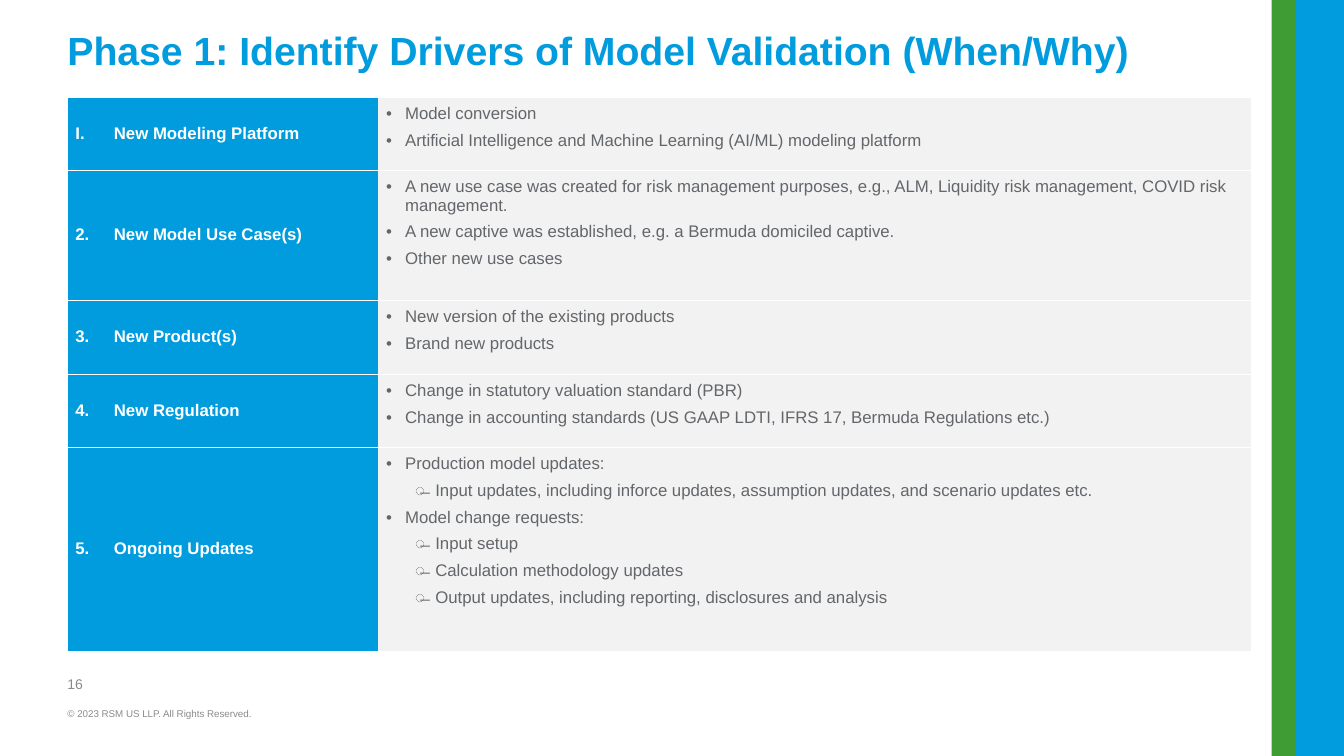
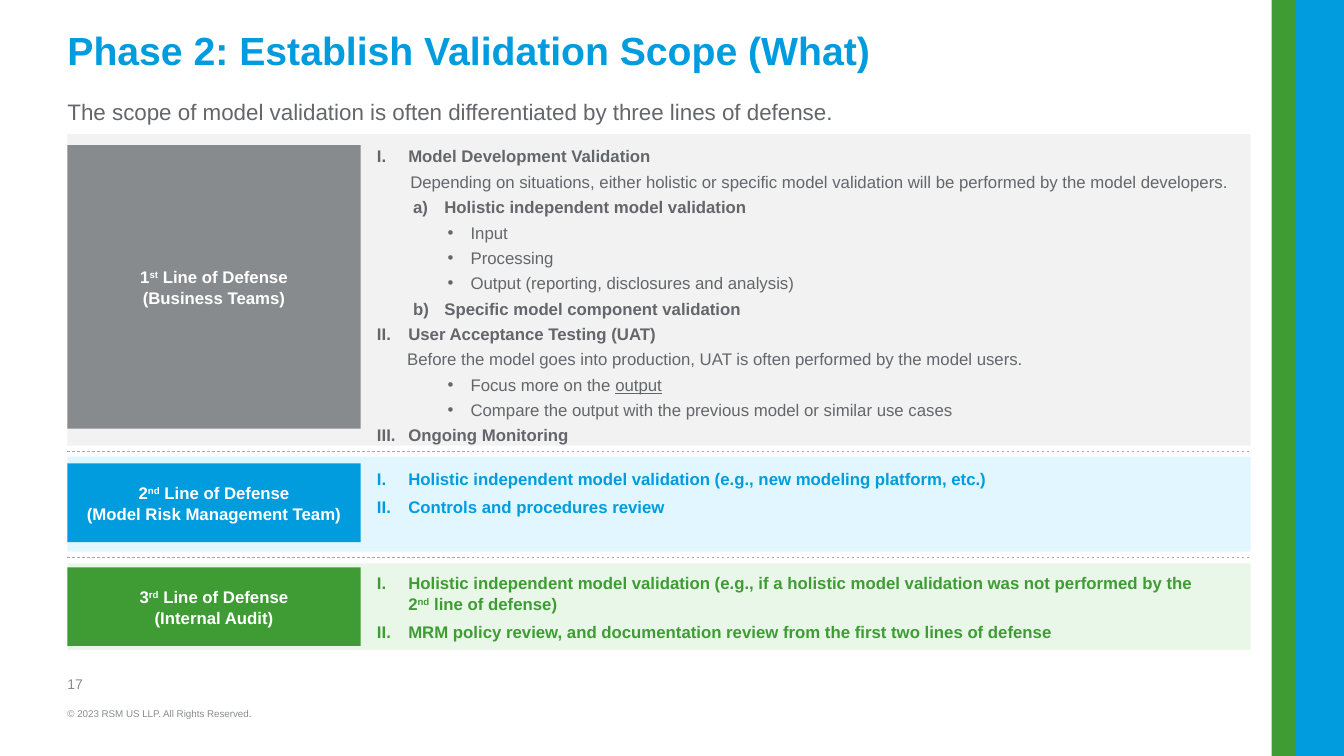
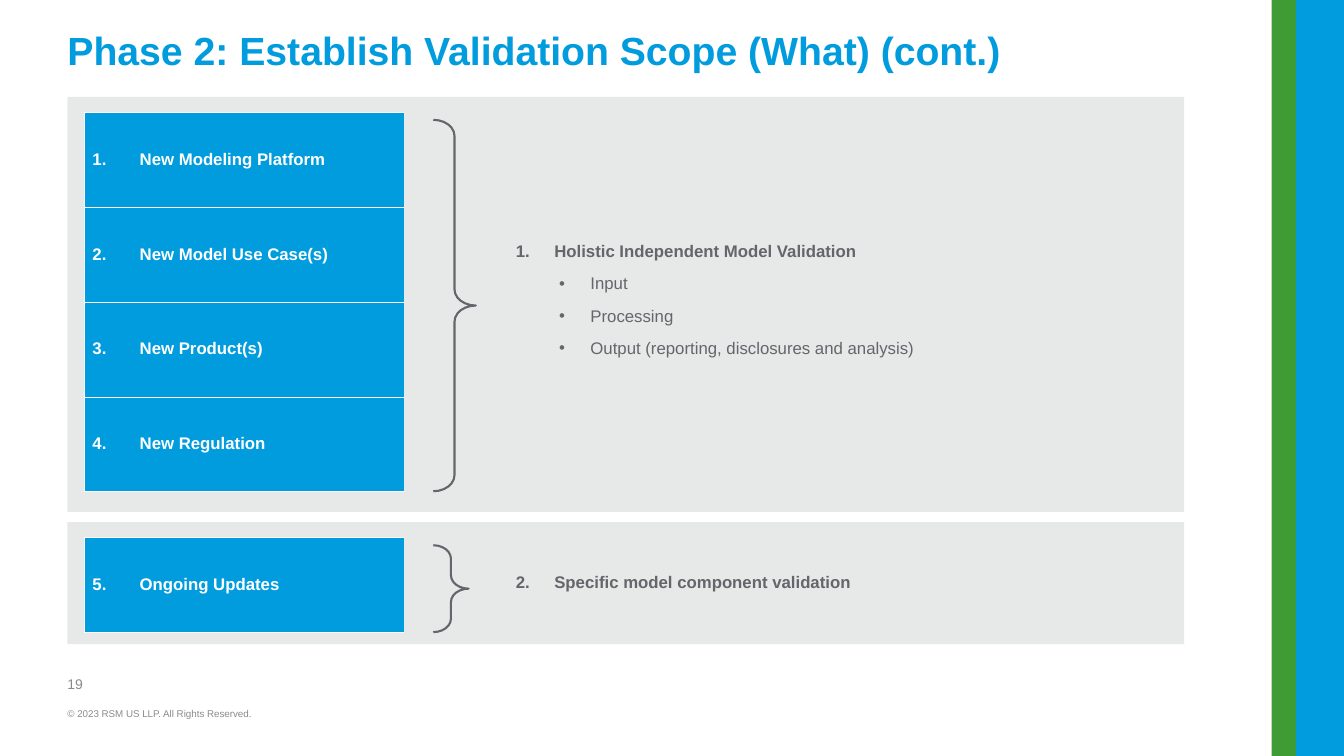
"""Build three slides on the phases of model validation."""
from dataclasses import dataclass
from lxml.etree import SubElement
from pptx import Presentation
from pptx.dml.color import RGBColor
from pptx.enum.dml import MSO_LINE
from pptx.enum.shapes import MSO_CONNECTOR, MSO_SHAPE
from pptx.enum.text import MSO_ANCHOR, MSO_AUTO_SIZE, PP_ALIGN
from pptx.oxml.ns import qn
from pptx.util import Cm, Pt


@dataclass(frozen=True)
class Theme:
    font: str = "Arial"
    blue: RGBColor = RGBColor(0x00, 0x9C, 0xDE)
    green: RGBColor = RGBColor(0x3F, 0x9C, 0x35)
    gray: RGBColor = RGBColor(0x88, 0x8B, 0x8D)
    ink: RGBColor = RGBColor(0x63, 0x66, 0x6A)
    dash: RGBColor = RGBColor(0xA6, 0xA6, 0xA6)
    panel: RGBColor = RGBColor(0xE7, 0xE8, 0xE8)
    pale: RGBColor = RGBColor(0xF2, 0xF2, 0xF2)
    sky: RGBColor = RGBColor(0xC5, 0xEE, 0xFF)
    mint: RGBColor = RGBColor(0xD5, 0xF0, 0xD2)
    white: RGBColor = RGBColor(0xFF, 0xFF, 0xFF)
    title: int = 28
    lead: int = 16
    body: int = 12
    page: int = 10
    legal: int = 7


theme = Theme()
edge = 1.7

# kind: level, left, hang, bullet tag, bullet attributes, bold
kinds = {
    "plain": (0, 0, 0, None, {}, False),
    "head": (0, 0, 0, None, {}, True),
    "point": (0, 0.48, 0.48, "a:buChar", {"char": "•"}, False),
    "stroke": (0, 1.24, 0.51, "a:buChar", {"char": "̶"}, False),
    "roman": (0, 0.79, 0.79, "a:buAutoNum", {"type": "romanUcPeriod"}, True),
    "note": (1, 0.84, 0, None, {}, False),
    "remark": (1, 0.76, 0, None, {}, False),
    "letter": (1, 1.7, 0.79, "a:buAutoNum", {"type": "alphaLcParenR"}, True),
    "deep": (2, 2.36, 0.58, "a:buChar", {"char": "•"}, False),
    "one": (0, 0.97, 0.97, "a:buAutoNum", {"type": "arabicPeriod"}, True),
    "two": (0, 0.97, 0.97, "a:buAutoNum",
            {"type": "arabicPeriod", "startAt": "2"}, True),
    "item": (2, 1.88, 0.79, "a:buChar", {"char": "•"}, False),
}


def write(frame, rows, tone, size=theme.body, gap=0, lead=1.05, align=PP_ALIGN.LEFT):
    """Fill a frame with (kind, text) rows; |^x| is raised and |_x| underlined."""
    for num, (kind, text) in enumerate(rows):
        level, left, hang, tag, attrs, bold = kinds[kind]
        para = frame.add_paragraph() if num else frame.paragraphs[0]
        para.level = level
        props = para._p.get_or_add_pPr()
        if left:
            props.set("marL", str(Cm(left)))
            props.set("indent", str(-Cm(hang)))
        if tag:
            SubElement(props, qn("a:buFont"), typeface=theme.font)
            SubElement(props, qn(tag), attrs)
        para.alignment = align
        para.line_spacing = lead
        para.space_before = Pt(gap if num else 0)
        para.font.name = theme.font
        para.font.size = Pt(size)
        para.font.bold = bold
        para.font.color.rgb = tone
        for part in text.split("|"):
            run = para.add_run()
            run.text = part.lstrip("^_")
            if part.startswith("^"):
                run._r.get_or_add_rPr().set("baseline", "30000")
            elif part.startswith("_"):
                run.font.underline = True


def grid(slide, left, top, wide, high, rows):
    """Add a table whose last column may hold a list of (kind, text) rows."""
    table = slide.shapes.add_table(len(rows), len(wide), Cm(left), Cm(top),
                                   Cm(sum(wide)), Cm(sum(high))).table
    table.first_row = table.horz_banding = False
    table._tbl.tblPr[0].text = "{2D5ABB26-0587-4C30-8999-92F81FD0307C}"
    for col, width in zip(table.columns, wide):
        col.width = Cm(width)
    for y, row in enumerate(rows):
        table.rows[y].height = Cm(high[y])
        for x, text in enumerate(row):
            cell = table.cell(y, x)
            cell.margin_left = cell.margin_right = Cm(0.2)
            cell.margin_top = cell.margin_bottom = Cm(0.2)
            for side in ("a:lnL", "a:lnT", "a:lnB")[1 if x else 0:]:
                line = SubElement(cell._tc.get_or_add_tcPr(), qn(side), w=str(Pt(0.5)))
                fill = SubElement(line, qn("a:solidFill"))
                SubElement(fill, qn("a:srgbClr"), val=str(theme.white))
            label = isinstance(text, str)
            cell.fill.solid()
            cell.fill.fore_color.rgb = theme.blue if label else theme.pale
            cell.vertical_anchor = MSO_ANCHOR.MIDDLE if label else MSO_ANCHOR.TOP
            write(cell.text_frame, [("head", text)] if label else text,
                  theme.white if label else theme.ink, gap=6, lead=0.97)


deck = Presentation()
deck.slide_width, deck.slide_height = Cm(33.87), Cm(19.05)
base = deck.slide_layouts[5]
head = base.placeholders[0]
head.left, head.top, head.width, head.height = Cm(edge), Cm(0.66), Cm(29.84), Cm(1.19)

pages = []
for title, num in [
    ("Phase 1: Identify Drivers of Model Validation (When/Why)", "16"),
    ("Phase 2: Establish Validation Scope (What)", "17"),
    ("Phase 2: Establish Validation Scope (What) (cont.)", "19"),
]:
    slide = deck.slides.add_slide(base)
    pages.append(slide)
    foot = slide.shapes.add_textbox(Cm(edge), Cm(17.02), Cm(5.69), Cm(0.43))
    for frame, text, kind, tone, size in [
        (slide.shapes.title.text_frame, title, "head", theme.blue, theme.title),
        (foot.text_frame, num, "plain", theme.gray, theme.page),
    ]:
        frame.margin_left = frame.margin_right = 0
        frame.margin_top = frame.margin_bottom = 0
        frame.word_wrap = True
        frame.auto_size = MSO_AUTO_SIZE.NONE
        frame.vertical_anchor = MSO_ANCHOR.MIDDLE
        write(frame, [(kind, text)], tone, size, lead=1.0)
drive, scope, cont = pages

legal = drive.shapes.add_textbox(Cm(edge), Cm(17.83), Cm(5.69), Cm(0.3))
frame = legal.text_frame
frame.margin_left = frame.margin_right = frame.margin_top = frame.margin_bottom = 0
frame.word_wrap = True
write(frame, [("plain", "© 2023 RSM US LLP. All Rights Reserved.")],
      theme.gray, theme.legal)
base.shapes._spTree.append(legal._element)
for left, wide, tone in [(32.05, 0.61, theme.green), (32.66, 1.21, theme.blue)]:
    bar = drive.shapes.add_shape(MSO_SHAPE.RECTANGLE, Cm(left), 0, Cm(wide),
                                 deck.slide_height)
    bar.shadow.inherit = False
    bar.fill.solid()
    bar.fill.fore_color.rgb = tone
    bar.line.fill.background()
    base.shapes._spTree.append(bar._element)

grid(drive, edge, 2.44, [0.97, 6.86, 22], [1.85, 3.28, 1.85, 1.85, 5.13], [
    ("I.", "New Modeling Platform", [
        ("point", "Model conversion"),
        ("point", "Artificial Intelligence and Machine Learning (AI/ML) modeling platform"),
    ]),
    ("2.", "New Model Use Case(s)", [
        ("point", "A new use case was created for risk management purposes, e.g., ALM, "
                  "Liquidity risk management, COVID risk management."),
        ("point", "A new captive was established, e.g. a Bermuda domiciled captive."),
        ("point", "Other new use cases"),
    ]),
    ("3.", "New Product(s)", [
        ("point", "New version of the existing products"),
        ("point", "Brand new products"),
    ]),
    ("4.", "New Regulation", [
        ("point", "Change in statutory valuation standard (PBR)"),
        ("point", "Change in accounting standards (US GAAP LDTI, IFRS 17, "
                  "Bermuda Regulations etc.)"),
    ]),
    ("5.", "Ongoing Updates", [
        ("point", "Production model updates:"),
        ("stroke", "Input updates, including inforce updates, assumption updates, "
                   "and scenario updates etc."),
        ("point", "Model change requests:"),
        ("stroke", "Input setup"),
        ("stroke", "Calculation methodology updates"),
        ("stroke", "Output updates, including reporting, disclosures and analysis"),
    ]),
])

for top, high, tone, clear in [
    (3.38, 7.85, theme.pale, False),
    (11.51, 2.39, theme.sky, True),
    (14.2, 2.18, theme.mint, True),
]:
    band = scope.shapes.add_shape(MSO_SHAPE.RECTANGLE, Cm(edge), Cm(top),
                                  Cm(29.82), Cm(high))
    band.shadow.inherit = False
    band.fill.solid()
    band.fill.fore_color.rgb = tone
    band.line.fill.background()
    if clear:
        SubElement(band._element.xpath(".//a:srgbClr")[0], qn("a:alpha"), val="50000")

for top, high, tone, team in [
    (3.66, 7.14, theme.gray, ("1|^st| Line of Defense", "(Business Teams)")),
    (11.68, 1.98, theme.blue, ("2|^nd| Line of Defense", "(Model Risk Management Team)")),
    (14.3, 1.98, theme.green, ("3|^rd| Line of Defense", "(Internal Audit)")),
]:
    label = scope.shapes.add_shape(MSO_SHAPE.RECTANGLE, Cm(edge), Cm(top),
                                   Cm(7.39), Cm(high))
    label.shadow.inherit = False
    label.fill.solid()
    label.fill.fore_color.rgb = tone
    label.line.fill.background()
    frame = label.text_frame
    frame.margin_left = frame.margin_right = Cm(0.18)
    frame.word_wrap = True
    frame.vertical_anchor = MSO_ANCHOR.MIDDLE
    write(frame, [("head", text) for text in team], theme.white, align=PP_ALIGN.CENTER)

for left, top, wide, high, tone, size, gap, rows in [
    (edge, 2.44, 29.64, 0.69, theme.ink, theme.lead, 0, [
        ("plain", "The scope of model validation is often differentiated by "
                  "three lines of defense."),
    ]),
    (9.5, 3.66, 22.02, 7.34, theme.ink, theme.body, 3, [
        ("roman", "Model Development Validation"),
        ("note", "Depending on situations, either holistic or specific model validation "
                 "will be performed by the model developers."),
        ("letter", "Holistic independent model validation"),
        ("deep", "Input"),
        ("deep", "Processing"),
        ("deep", "Output (reporting, disclosures and analysis)"),
        ("letter", "Specific model component validation"),
        ("roman", "User Acceptance Testing (UAT)"),
        ("remark", "Before the model goes into production, UAT is often performed "
                   "by the model users."),
        ("deep", "Focus more on the |_output"),
        ("deep", "Compare the output with the previous model or similar use cases"),
        ("roman", "Ongoing Monitoring"),
    ]),
    (9.5, 11.79, 22.02, 1.19, theme.blue, theme.body, 5, [
        ("roman", "Holistic independent model validation "
                  "(e.g., new modeling platform, etc.)"),
        ("roman", "Controls and procedures review"),
    ]),
    (9.5, 14.4, 20.98, 1.73, theme.green, theme.body, 5, [
        ("roman", "Holistic independent model validation (e.g., if a holistic model "
                  "validation was not performed by the 2|^nd| line of defense)"),
        ("roman", "MRM policy review, and documentation review from the first "
                  "two lines of defense"),
    ]),
]:
    frame = scope.shapes.add_textbox(Cm(left), Cm(top), Cm(wide), Cm(high)).text_frame
    frame.margin_left = frame.margin_right = frame.margin_top = frame.margin_bottom = 0
    frame.word_wrap = True
    write(frame, rows, tone, size, gap)

for top in (11.38, 14.05):
    rule = scope.shapes.add_connector(MSO_CONNECTOR.STRAIGHT, Cm(1.68), Cm(top),
                                      Cm(31.5), Cm(top))
    rule.line.color.rgb = theme.dash
    rule.line.width = Pt(0.5)
    rule.line.dash_style = MSO_LINE.DASH
    SubElement(rule._element.spPr, qn("a:effectLst"))

for top, high, wide, names, start, lift, tall, rows in [
    (2.44, 10.46, 1.07,
     ["New Modeling Platform", "New Model Use Case(s)", "New Product(s)", "New Regulation"],
     1, 5.92, 3.18, [
         ("one", "Holistic Independent Model Validation"),
         ("item", "Input"),
         ("item", "Processing"),
         ("item", "Output (reporting, disclosures and analysis)"),
     ]),
    (13.16, 3.07, 0.89, ["Ongoing Updates"], 5, 14.25, 0.76,
     [("two", "Specific model component validation")]),
]:
    panel = cont.shapes.add_shape(MSO_SHAPE.RECTANGLE, Cm(edge), Cm(top),
                                  Cm(28.14), Cm(high))
    panel.shadow.inherit = False
    panel.fill.solid()
    panel.fill.fore_color.rgb = theme.panel
    panel.line.fill.background()
    steps = [2.39] * len(names)
    grid(cont, 2.13, top + 0.39, [1.19, 6.86], steps,
         [(f"{num}.", name) for num, name in enumerate(names, start)])
    brace = cont.shapes.add_shape(MSO_SHAPE.RIGHT_BRACE, Cm(10.92), Cm(top + 0.58),
                                  Cm(wide), Cm(sum(steps) - 0.2))
    brace.shadow.inherit = False
    brace.adjustments[0] = 0.38
    brace.fill.background()
    brace.line.color.rgb = theme.ink
    brace.line.width = Pt(1.5)
    frame = cont.shapes.add_textbox(Cm(12.75), Cm(lift), Cm(16.94), Cm(tall)).text_frame
    frame.word_wrap = True
    write(frame, rows, theme.ink, gap=8)

deck.save("out.pptx")
